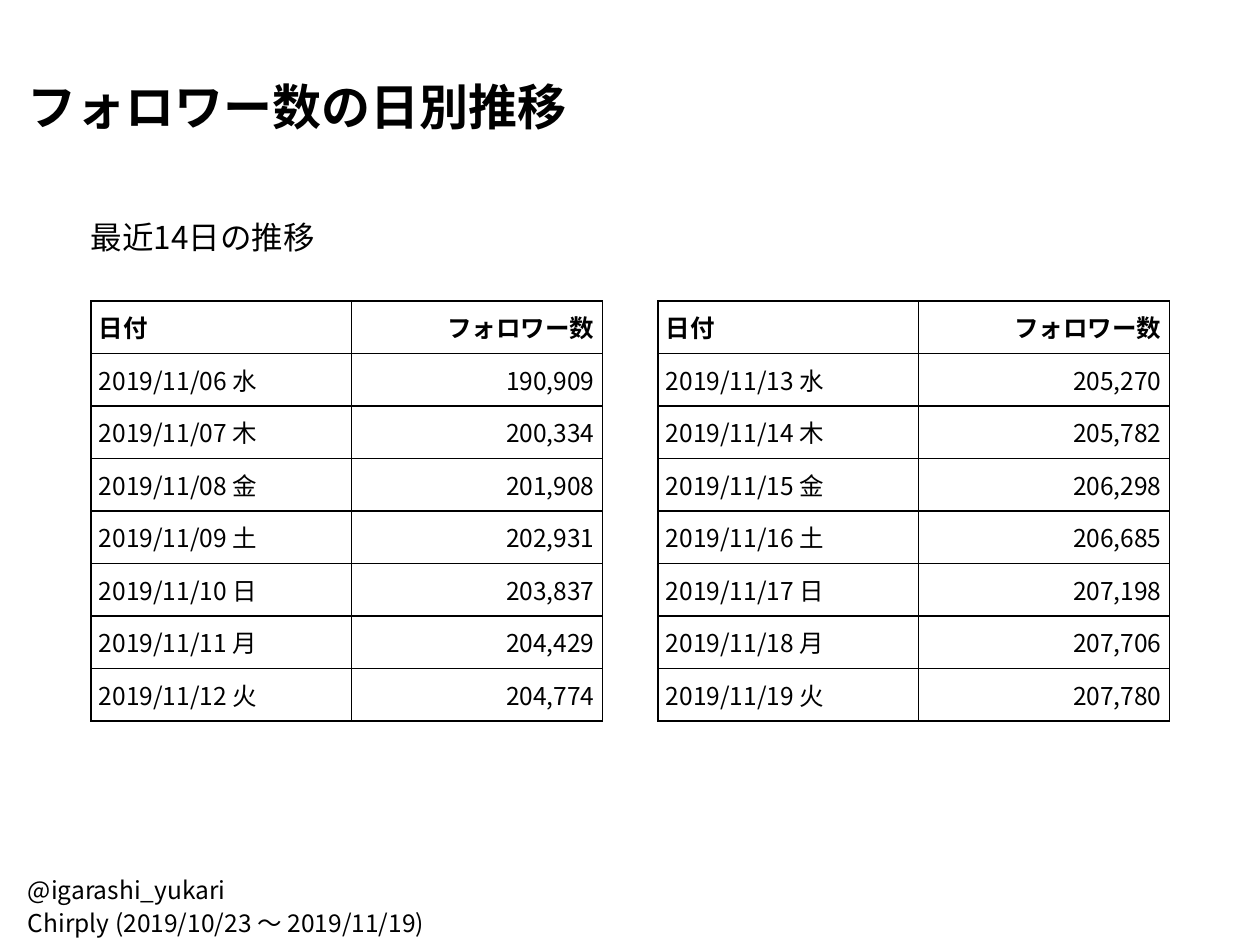
from dataclasses import dataclass

from lxml.etree import SubElement
from pptx import Presentation
from pptx.dml.color import RGBColor
from pptx.enum.text import MSO_ANCHOR as Anchor, PP_ALIGN as Align
from pptx.oxml.ns import qn
from pptx.util import Pt

FONT = "Noto Sans CJK JP"
COLORS = {"text": "000000", "border": "000000", "background": "FFFFFF"}
HEADER = ("日付", "フォロワー数")
COLUMN_WIDTHS = (149, 143.3)
ROW_HEIGHT = 30
CELL_MARGIN = 4.5
TABLE_TOP = 172
TABLE_LEFT = 52
TABLE_STEP = 324  # from one weekly table to the next


@dataclass(frozen=True)
class TextBlock:
    text: str
    left: float
    top: float
    width: float
    height: float
    size: float
    line_spacing: float
    bold: bool = False


@dataclass(frozen=True)
class Week:
    first_day: int
    followers: tuple[int, ...]

    def rows(self) -> list[tuple[str, str]]:
        return [
            (f"2019/11/{self.first_day + offset:02d} {weekday}", f"{count:,}")
            for offset, (weekday, count) in enumerate(zip("水木金土日月火", self.followers))
        ]


TEXT_BLOCKS = (
    TextBlock("最近14日の推移", 36, 114, 648, 34, 18, 24),
    TextBlock("フォロワー数の日別推移", 0, 32, 720, 44, 28, 37.3, bold=True),
    TextBlock("@igarashi_yukari\nChirply (2019/10/23 〜 2019/11/19)", 0, 490, 504, 44, 14, 18.7),
)
WEEKS = (
    Week(6, (190909, 200334, 201908, 202931, 203837, 204429, 204774)),
    Week(13, (205270, 205782, 206298, 206685, 207198, 207706, 207780)),
)


def write_text(text_frame, text: str, *, size: float, bold: bool = False,
               align: Align = Align.LEFT, line_spacing: float | None = None) -> None:
    paragraph = text_frame.paragraphs[0]
    paragraph.text = text
    paragraph.alignment = align
    if line_spacing:
        paragraph.line_spacing = Pt(line_spacing)
    for run in paragraph.runs:
        run.font.size = Pt(size)
        run.font.bold = bold
        run.font.name = FONT
        run.font.color.rgb = RGBColor.from_string(COLORS["text"])
        # East Asian characters take their own typeface setting
        SubElement(run.font._element, qn("a:ea"), typeface=FONT)


def set_margins(target, horizontal: float, vertical: float) -> None:
    target.margin_left = target.margin_right = Pt(horizontal)
    target.margin_top = target.margin_bottom = Pt(vertical)


def add_text_block(slide, block: TextBlock) -> None:
    shape = slide.shapes.add_textbox(
        Pt(block.left), Pt(block.top), Pt(block.width), Pt(block.height))
    text_frame = shape.text_frame
    text_frame.word_wrap = True
    set_margins(text_frame, 16, 8)
    write_text(text_frame, block.text, size=block.size, bold=block.bold,
               line_spacing=block.line_spacing)


def format_cell(cell) -> None:
    cell.vertical_anchor = Anchor.MIDDLE
    set_margins(cell, CELL_MARGIN, CELL_MARGIN)
    properties = cell._tc.get_or_add_tcPr()
    for side in ("lnL", "lnR", "lnT", "lnB"):
        line = SubElement(properties, qn(f"a:{side}"), w=str(Pt(1)))
        fill = SubElement(line, qn("a:solidFill"))
        SubElement(fill, qn("a:srgbClr"), val=COLORS["border"])
    cell.fill.background()


def add_week_table(slide, week: Week, left: float) -> None:
    rows = [HEADER, *week.rows()]
    table = slide.shapes.add_table(
        len(rows), len(HEADER), Pt(left), Pt(TABLE_TOP),
        Pt(sum(COLUMN_WIDTHS)), Pt(ROW_HEIGHT * len(rows))).table
    table.first_row = table.horz_banding = False
    for column, width in zip(table.columns, COLUMN_WIDTHS):
        column.width = Pt(width)
    for row_index, row in enumerate(rows):
        table.rows[row_index].height = Pt(ROW_HEIGHT)
        for column_index, text in enumerate(row):
            cell = table.cell(row_index, column_index)
            format_cell(cell)
            write_text(cell.text_frame, text, size=14, bold=row_index == 0,
                       align=Align.RIGHT if column_index else Align.LEFT)


def main() -> None:
    presentation = Presentation()
    presentation.slide_width, presentation.slide_height = Pt(720), Pt(540)
    slide = presentation.slides.add_slide(presentation.slide_layouts[6])
    slide.background.fill.solid()
    slide.background.fill.fore_color.rgb = RGBColor.from_string(COLORS["background"])

    # Title, subtitle and account footer
    for block in TEXT_BLOCKS:
        add_text_block(slide, block)

    # One table per week, side by side
    for index, week in enumerate(WEEKS):
        add_week_table(slide, week, TABLE_LEFT + index * TABLE_STEP)

    presentation.save("out.pptx")


if __name__ == "__main__":
    main()
